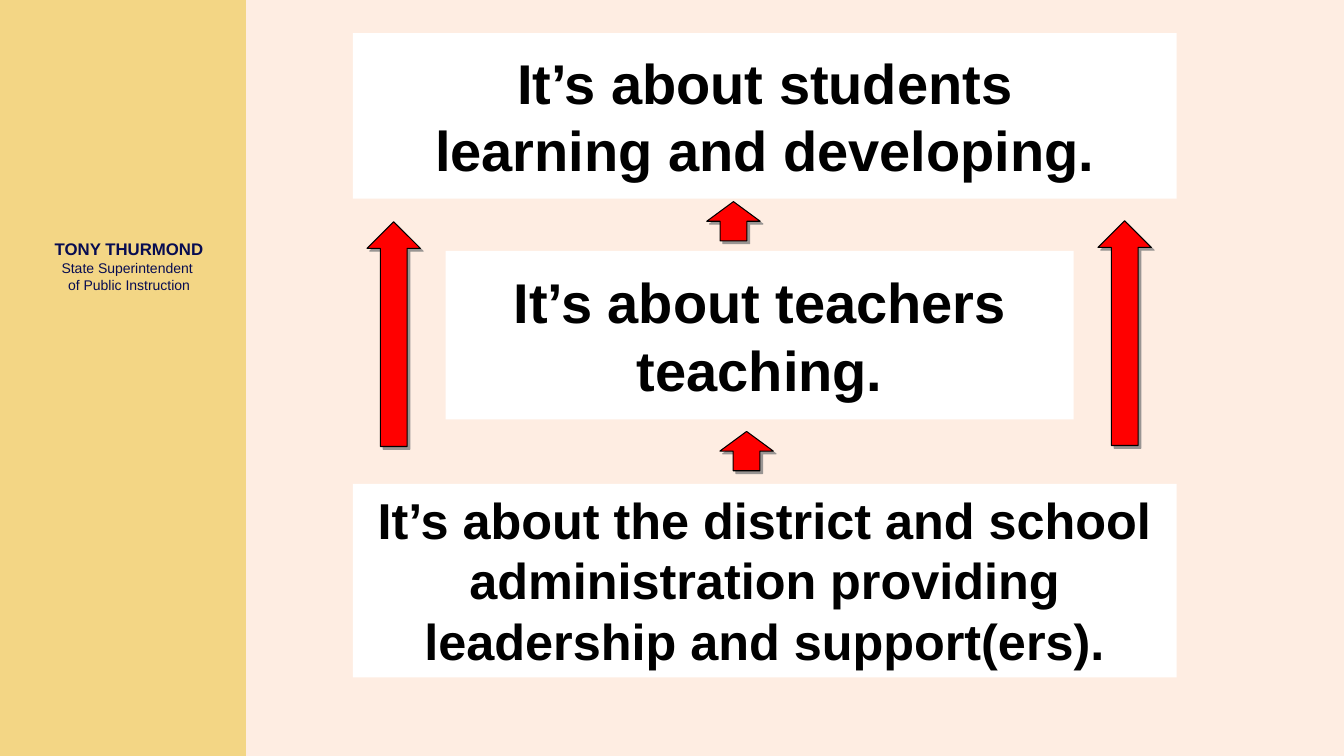
from dataclasses import dataclass
from lxml.etree import SubElement
from pptx import Presentation
from pptx.dml.color import RGBColor
from pptx.enum.shapes import MSO_SHAPE
from pptx.enum.text import MSO_ANCHOR, PP_ALIGN
from pptx.oxml.ns import qn
from pptx.util import Pt

SCALE = 9144


@dataclass(frozen=True)
class Theme:
    font: str = "Arial"
    page: str = "FEEDE2"
    band: str = "F3D685"
    card: str = "FFFFFF"
    navy: str = "070C51"
    ink: str = "000000"
    arrow: str = "FF0000"
    shade: str = "808080"
    large: int = 40
    medium: int = 36
    name: int = 12
    role: int = 10


THEME = Theme()


def emu(box):
    return [n * SCALE for n in box]


def style(font, size, color, bold):
    form = {"name": THEME.font, "size": Pt(size), "bold": bold}
    for key, value in form.items():
        setattr(font, key, value)
    font.color.rgb = RGBColor.from_string(color)


def setup(frame, anchor):
    form = {"word_wrap": True, "vertical_anchor": anchor}
    for key, value in form.items():
        setattr(frame, key, value)


def block(slide, box, fill, kind=MSO_SHAPE.RECTANGLE):
    shape = slide.shapes.add_shape(kind, *emu(box))
    shape.shadow.inherit = False
    shape.fill.solid()
    shape.fill.fore_color.rgb = RGBColor.from_string(fill)
    shape.line.fill.background()
    return shape


def sidebar(slide, box):
    left, top, width, height = box
    block(slide, box, THEME.band)
    label = slide.shapes.add_textbox(*emu((left + 35, top + 226, 186, 76)))
    setup(label.text_frame, MSO_ANCHOR.MIDDLE)
    para = label.text_frame.paragraphs[0]
    para.alignment = PP_ALIGN.CENTER
    lines = [
        ("TONY THURMOND", THEME.name, True),
        ("State Superintendent ", THEME.role, False),
        ("of Public Instruction", THEME.role, False),
    ]
    for index, (text, size, bold) in enumerate(lines):
        if index:
            para.add_line_break()
        run = para.add_run()
        run.text = text
        style(run.font, size, THEME.navy, bold)


def card(slide, box, lines, size, anchor=MSO_ANCHOR.MIDDLE):
    frame = block(slide, box, THEME.card).text_frame
    setup(frame, anchor)
    frame.text = "\n".join(lines)
    for para in frame.paragraphs:
        para.alignment = PP_ALIGN.CENTER
        style(para.font, size, THEME.ink, True)
        for run in para.runs:
            style(run.font, size, THEME.ink, True)


def arrow(slide, box):
    shape = block(slide, box, THEME.arrow, MSO_SHAPE.UP_ARROW)
    shape.line.color.rgb = RGBColor.from_string(THEME.ink)
    shape.line.width = Pt(0.75)
    effects = shape.element.spPr.find(qn("a:effectLst"))
    shadow = SubElement(effects, qn("a:outerShdw"), blurRad="0",
                        dist=str(Pt(2.8)), dir="2700000",
                        algn="ctr", rotWithShape="0")
    color = SubElement(shadow, qn("a:srgbClr"), val=THEME.shade)
    SubElement(color, qn("a:alpha"), val="80000")


def diagram(slide, box):
    left, top, width, height = box
    card(slide, (left, top, width, 164),
         ["It’s about students", "learning and developing."], THEME.large)
    card(slide, (left, top + 447, width, 192),
         ["It’s about the district and school administration "
          "providing leadership and support(ers)."],
         THEME.medium, MSO_ANCHOR.TOP)
    card(slide, (left + 92, top + 216, 623, 167),
         ["It’s about teachers", "teaching."], THEME.large)
    for x, y, tall in [(14, 187, 223), (739, 186, 223),
                       (351, 167, 39), (364, 395, 39)]:
        arrow(slide, (left + x, top + y, 53, tall))


def main():
    deck = Presentation()
    deck.slide_width, deck.slide_height = emu((1333, 750))
    slide = deck.slides.add_slide(deck.slide_layouts[6])
    block(slide, (0, 0, 1333, 750), THEME.page)
    sidebar(slide, (0, 0, 244, 750))
    diagram(slide, (350, 33, 817, 639))
    deck.save("out.pptx")


if __name__ == "__main__":
    main()
